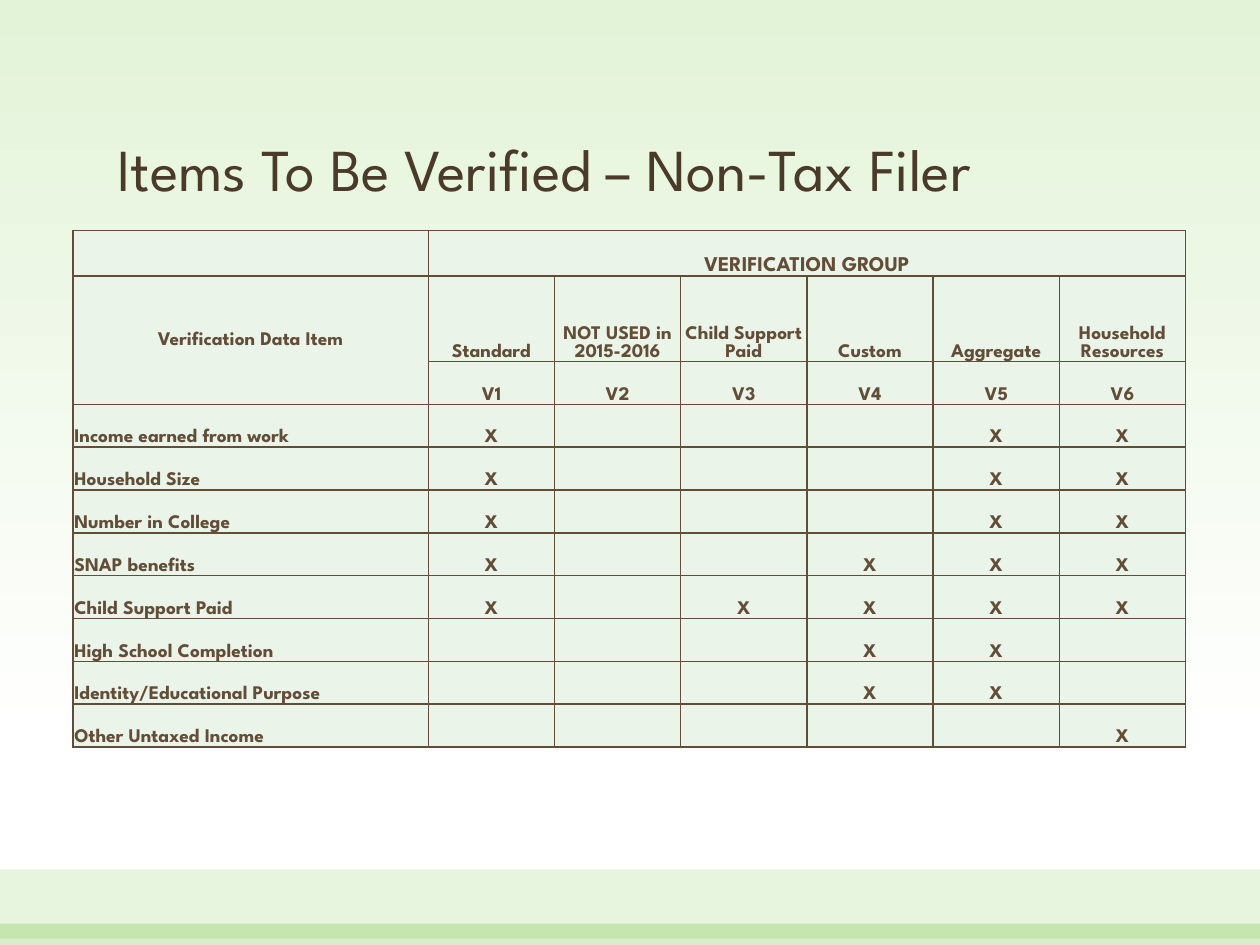
from lxml.etree import SubElement
from pptx import Presentation
from pptx.dml.color import RGBColor
from pptx.enum.shapes import MSO_SHAPE as SHAPE
from pptx.enum.text import MSO_ANCHOR as ANCHOR, MSO_AUTO_SIZE as AUTO, PP_ALIGN as ALIGN
from pptx.oxml.ns import qn
from pptx.util import Inches, Pt

TITLE = "Items To Be Verified – Non-Tax Filer"
GROUP_HEADING = "VERIFICATION GROUP"
ITEM_HEADING = "Verification Data Item"
GROUPS = [
    ("V1", "Standard"),
    ("V2", "NOT USED in 2015-2016"),
    ("V3", "Child Support Paid"),
    ("V4", "Custom"),
    ("V5", "Aggregate"),
    ("V6", "Household Resources"),
]
ITEMS = [  # data item, groups that verify it
    ("Income earned from work", "V1 V5 V6"),
    ("Household Size", "V1 V5 V6"),
    ("Number in College", "V1 V5 V6"),
    ("SNAP benefits", "V1 V4 V5 V6"),
    ("Child Support Paid", "V1 V3 V4 V5 V6"),
    ("High School Completion", "V4 V5"),
    ("Identity/Educational Purpose", "V4 V5"),
    ("Other Untaxed Income", "V6"),
]
BANDS = [(6.9, 0.55, 17), (7.33, 0.17, 28)]  # top, height, opacity in percent

THEME = {
    "font": "League Spartan",
    "title": "4A3A2A", "text": "624D38", "border": "624D38",
    "cell": "EBF4E8", "band": "72C23C",
    "bg": [(0, "E3F3D8"), (0.79, "FFFFFF")],
    "title_pt": 34, "heading_pt": 12, "cell_pt": 11, "border_pt": 1,
}
LEFT, TOP, WIDTH = 0.58, 1.83, 8.83
ITEM_COL = 2.82
HEAD_ROWS, ROW = [0.36, 0.68, 0.34], 0.34


def rgb(name):
    return RGBColor.from_string(THEME[name])


def style_runs(p, size, color, bold):
    for r in p.runs:
        r.font.name, r.font.size, r.font.bold = THEME["font"], Pt(size), bold
        r.font.color.rgb = rgb(color)


def paint_background(slide):
    fill = slide.background.fill
    fill.gradient()
    fill.gradient_angle = 270
    for stop, (position, color) in zip(fill.gradient_stops, THEME["bg"]):
        stop.position = position
        stop.color.rgb = RGBColor.from_string(color)


def add_band(slide, top, height, opacity):
    s = slide.shapes.add_shape(SHAPE.RECTANGLE, 0, Inches(top), Inches(10), Inches(height))
    s.shadow.inherit = False
    s.line.fill.background()
    s.fill.solid()
    s.fill.fore_color.rgb = rgb("band")
    color = s.fill._xPr.find(".//" + qn("a:srgbClr"))
    SubElement(color, qn("a:alpha"), val=str(opacity * 1000))


def add_title(slide):
    sp = slide.shapes.title
    sp.left, sp.top, sp.width, sp.height = map(Inches, (0.83, 0.48, 8.07, 1.19))
    tf = sp.text_frame
    tf.text = TITLE
    tf.auto_size, tf.vertical_anchor = AUTO.NONE, ANCHOR.BOTTOM
    p = tf.paragraphs[0]
    p.alignment, p.line_spacing = ALIGN.LEFT, 0.9
    style_runs(p, THEME["title_pt"], "title", False)


def add_borders(cell):
    tcPr = cell._tc.get_or_add_tcPr()
    for side in "LRTB":
        ln = SubElement(tcPr, qn(f"a:ln{side}"), w=str(Pt(THEME["border_pt"])))
        SubElement(SubElement(ln, qn("a:solidFill")), qn("a:srgbClr"), val=THEME["border"])


def fill_cell(cell, text, size, align):
    add_borders(cell)
    cell.fill.solid()
    cell.fill.fore_color.rgb = rgb("cell")
    cell.margin_left = cell.margin_right = cell.margin_top = Inches(0.01)
    cell.margin_bottom = 0
    cell.vertical_anchor = ANCHOR.BOTTOM
    cell.text = text
    p = cell.text_frame.paragraphs[0]
    p.alignment = align
    style_runs(p, size, "text", True)


def add_verification_table(slide):
    codes, names = zip(*GROUPS)
    rows = [
        ["", GROUP_HEADING] + [""] * (len(GROUPS) - 1),
        [ITEM_HEADING, *names],
        ["", *codes],
    ]
    rows += [[item] + ["X" if c in used.split() else "" for c in codes] for item, used in ITEMS]
    heights = HEAD_ROWS + [ROW] * len(ITEMS)
    widths = [ITEM_COL] + [(WIDTH - ITEM_COL) / len(GROUPS)] * len(GROUPS)

    table = slide.shapes.add_table(len(rows), len(widths), Inches(LEFT), Inches(TOP),
                                   Inches(WIDTH), Inches(sum(heights))).table
    table.first_row = table.horz_banding = False
    for col, width in zip(table.columns, widths):
        col.width = Inches(width)
    for row, height in zip(table.rows, heights):
        row.height = Inches(height)
    for i, texts in enumerate(rows):
        size = THEME["cell_pt"] if i else THEME["heading_pt"]
        for j, text in enumerate(texts):
            is_item = j == 0 and i >= len(HEAD_ROWS)
            fill_cell(table.cell(i, j), text, size, ALIGN.LEFT if is_item else ALIGN.CENTER)
    table.cell(0, 1).merge(table.cell(0, len(GROUPS)))
    table.cell(1, 0).merge(table.cell(2, 0))
    table.cell(1, 0).vertical_anchor = ANCHOR.MIDDLE


def main():
    prs = Presentation()
    prs.slide_width, prs.slide_height = Inches(10), Inches(7.5)
    slide = prs.slides.add_slide(prs.slide_layouts[5])
    paint_background(slide)
    for band in BANDS:
        add_band(slide, *band)
    add_title(slide)
    add_verification_table(slide)
    prs.save("out.pptx")


if __name__ == "__main__":
    main()
